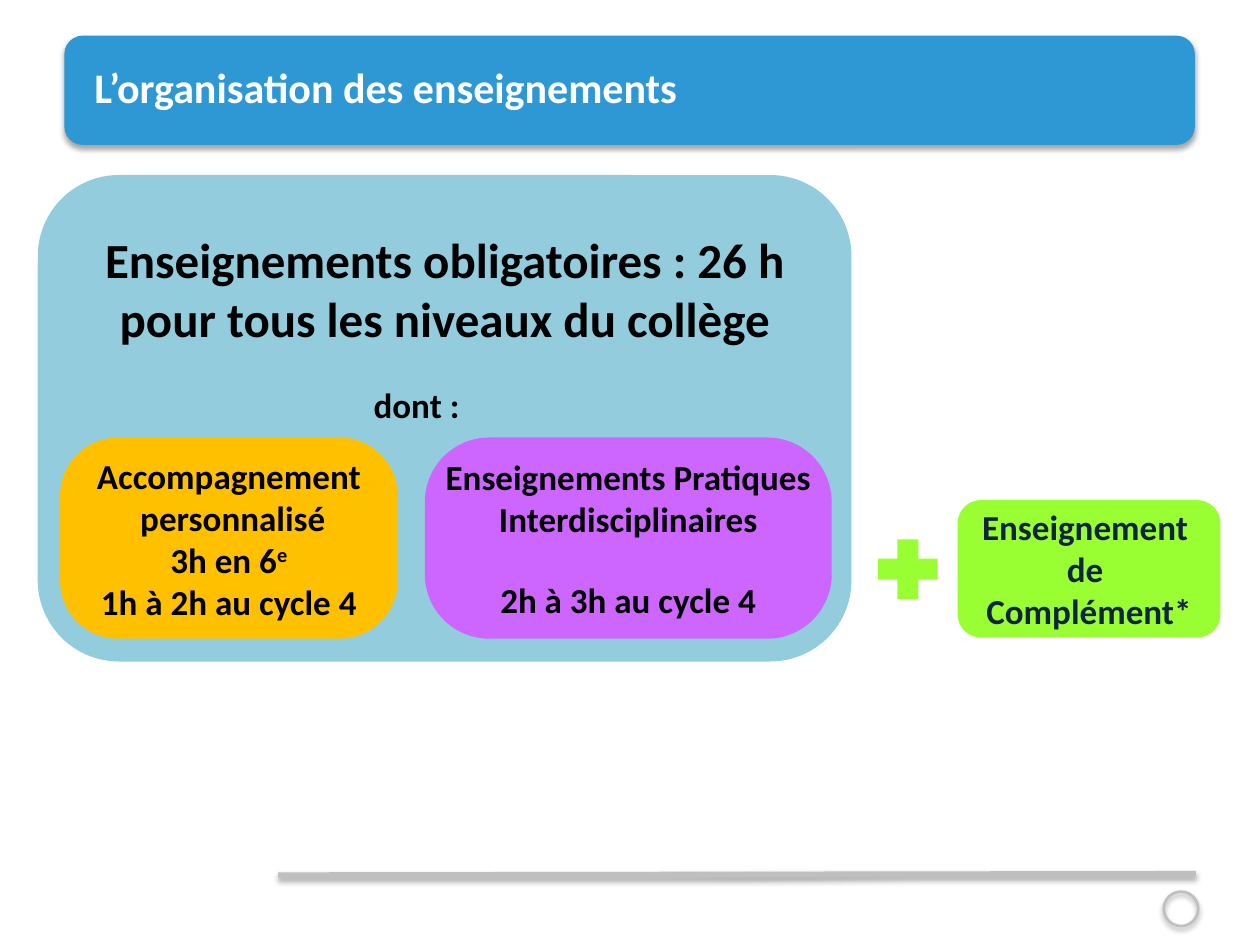
from lxml import etree
from pptx import Presentation
from pptx.dml.color import RGBColor
from pptx.enum.shapes import MSO_CONNECTOR, MSO_SHAPE
from pptx.enum.text import MSO_ANCHOR, PP_ALIGN
from pptx.oxml.ns import qn
from pptx.util import Pt

TITLE = "L’organisation des enseignements"
MAIN_LINES = [
    dict(text="Enseignements obligatoires : 26 h", size=28),
    dict(text="pour tous les niveaux du collège", size=28),
    dict(text="dont :", size=20, before=21, right_margin=32),
]
INNER_TOP, INNER_HEIGHT = 250, 115
# Each card: left, top, width, height, corner, fill, text colour, lines
CARDS = [
    (242.8, INNER_TOP, 232.5, INNER_HEIGHT, 0.32, "CC66FF", "000000", [
        dict(text="Enseignements Pratiques"),
        dict(text="Interdisciplinaires"),
        dict(text="2h à 3h au cycle 4", before=22),
    ]),
    (34.3, INNER_TOP, 193, INNER_HEIGHT, 0.29, "FFC000", "000000", [
        dict(text="Accompagnement"),
        dict(text=" personnalisé"),
        dict(text="3h en 6", superscript="e"),
        dict(text="1h à 2h au cycle 4"),
    ]),
    (547.2, 285.8, 150.2, 78.5, 0.17, "99FF33", "10243E", [
        dict(text="Enseignement "),
        dict(text="de "),
        dict(text="Complément*"),
    ]),
]


def color(value):
    return RGBColor.from_string(value)


def set_effects(shape, shadow_alpha=None):
    """Replace the theme effects by none, or by a soft shadow falling down."""
    properties = shape._element.spPr
    for old in properties.findall(qn("a:effectLst")):
        properties.remove(old)
    effects = etree.SubElement(properties, qn("a:effectLst"))
    if shadow_alpha:
        shadow = etree.SubElement(effects, qn("a:outerShdw"), blurRad=str(Pt(3.1)),
                                  dist=str(Pt(1.8)), dir="5400000", rotWithShape="0")
        black = etree.SubElement(shadow, qn("a:srgbClr"), val="000000")
        etree.SubElement(black, qn("a:alpha"), val=str(shadow_alpha * 1000))


def add_shape(slide, kind, box, fill=None, line=None, corner=None, shadow_alpha=None):
    shape = slide.shapes.add_shape(kind, *map(Pt, box))
    if corner is not None:
        shape.adjustments[0] = corner
    if fill:
        shape.fill.solid()
        shape.fill.fore_color.rgb = color(fill)
    else:
        shape.fill.background()
    if line:
        shape.line.color.rgb = color(line)
        shape.line.width = Pt(1.5)
    else:
        shape.line.fill.background()
    set_effects(shape, shadow_alpha)
    return shape


def add_text(paragraph, text, size=20, ink="000000", align=PP_ALIGN.CENTER,
             before=0, right_margin=0, superscript=None):
    paragraph.alignment = align
    if before:
        paragraph.space_before = Pt(before)
    if right_margin:
        paragraph._p.get_or_add_pPr().set("marR", str(Pt(right_margin)))
    for part in filter(None, (text, superscript)):
        run = paragraph.add_run()
        run.text = part
        font = run.font
        font.name, font.size, font.bold = "Calibri", Pt(size), True
        font.color.rgb = color(ink)
    if superscript:
        run._r.get_or_add_rPr().set("baseline", "30000")


def fill_frame(frame, lines, anchor=MSO_ANCHOR.MIDDLE, wrap=False, **formats):
    frame.word_wrap = wrap
    frame.vertical_anchor = anchor
    for index, line in enumerate(lines):
        paragraph = frame.add_paragraph() if index else frame.paragraphs[0]
        add_text(paragraph, **{**formats, **line})


def add_frame_of_slide(slide):
    """Title band, footer rule and page-number ring."""
    add_shape(slide, MSO_SHAPE.ROUNDED_RECTANGLE, (36.8, 20.4, 646, 62.4),
              fill="2E98D5", corner=0.167, shadow_alpha=35)
    rule = slide.shapes.add_connector(MSO_CONNECTOR.STRAIGHT, Pt(159), Pt(500),
                                      Pt(683.3), Pt(499.2))
    rule.line.color.rgb = color("BFBFBF")
    rule.line.width = Pt(3)
    set_effects(rule, 38)
    add_shape(slide, MSO_SHAPE.OVAL, (665, 509.5, 19.7, 19.7),
              line="BFBFBF", shadow_alpha=35)
    title = slide.shapes.add_textbox(Pt(54), Pt(13), Pt(629), Pt(73.4)).text_frame
    title.margin_left = title.margin_right = title.margin_top = title.margin_bottom = 0
    fill_frame(title, [dict(text=TITLE)], wrap=True, size=24, ink="FFFFFF",
               align=PP_ALIGN.LEFT)


def main():
    presentation = Presentation()
    presentation.slide_width, presentation.slide_height = Pt(720), Pt(540)
    slide = presentation.slides.add_slide(presentation.slide_layouts[6])
    add_frame_of_slide(slide)

    main_box = add_shape(slide, MSO_SHAPE.ROUNDED_RECTANGLE, (21.6, 100, 465, 278),
                         fill="93CDDD", corner=0.167)
    main_box.text_frame.margin_top = Pt(17.4)
    fill_frame(main_box.text_frame, MAIN_LINES, anchor=MSO_ANCHOR.TOP, wrap=True)

    for *box, corner, fill, ink, lines in CARDS:
        card = add_shape(slide, MSO_SHAPE.ROUNDED_RECTANGLE, box, fill=fill, corner=corner)
        fill_frame(card.text_frame, lines, ink=ink)

    add_shape(slide, MSO_SHAPE.CROSS, (501.8, 308.2, 34, 34), fill="99FF33", corner=0.325)
    presentation.save("out.pptx")


if __name__ == "__main__":
    main()
